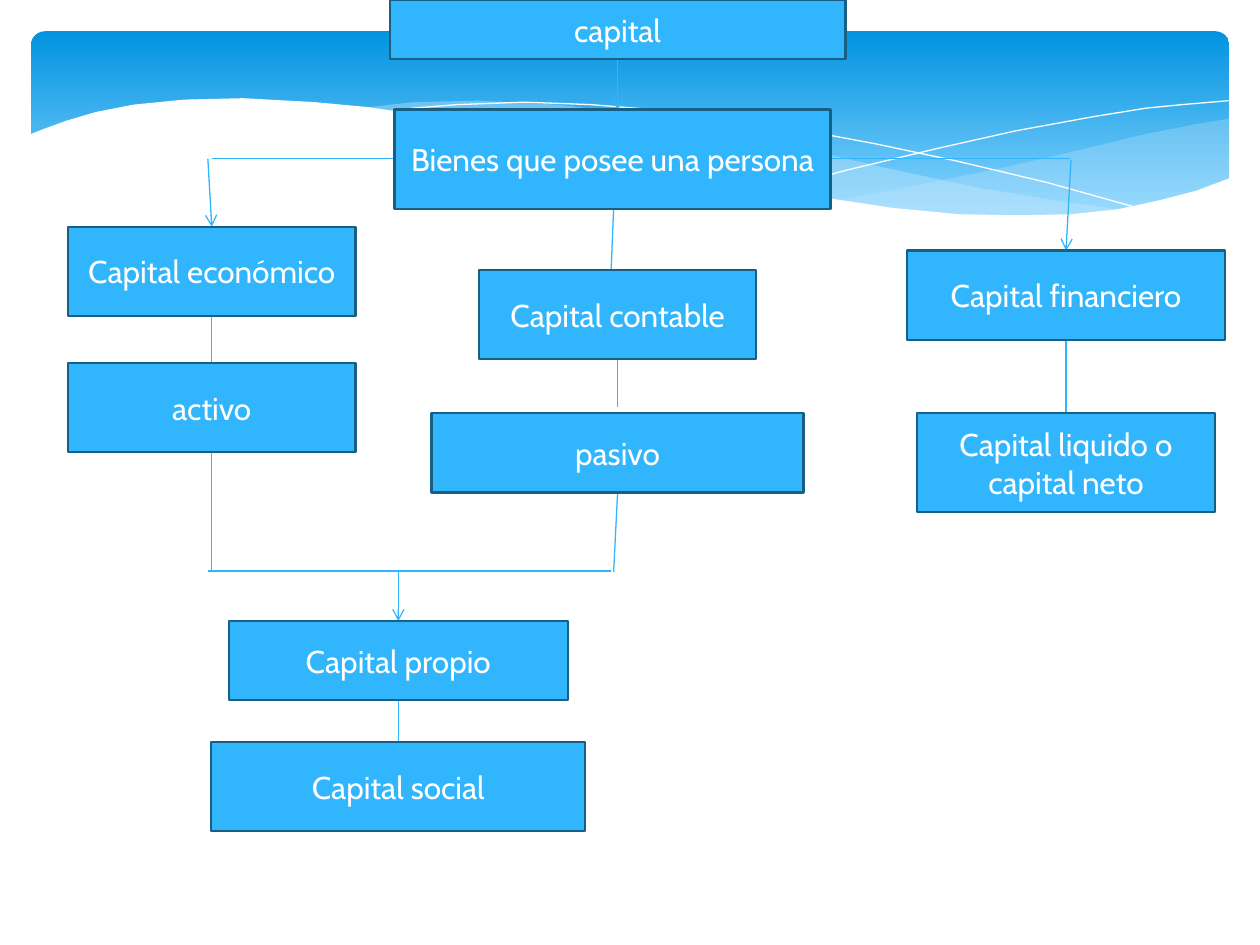
from pptx import Presentation
from pptx.dml.color import RGBColor
from pptx.enum.shapes import MSO_CONNECTOR as LINK, MSO_SHAPE as KIND
from pptx.enum.text import MSO_ANCHOR as ANCHOR, PP_ALIGN as ALIGN
from pptx.oxml.ns import qn
from pptx.util import Cm, Pt
from lxml.etree import SubElement as Sub

SKY = RGBColor(0x31, 0xB6, 0xFD)
NAVY = RGBColor(0x19, 0x5F, 0x84)
DEEP = RGBColor(0x02, 0x93, 0xE0)
LIGHT = RGBColor(0x83, 0xD3, 0xFE)
PALE = RGBColor(0xC6, 0xE7, 0xFC)
WHITE = RGBColor(0xFF, 0xFF, 0xFF)

deck = Presentation()
deck.slide_width, deck.slide_height = Cm(25.4), Cm(19.05)
slide = deck.slides.add_slide(deck.slide_layouts[6])
shapes = slide.shapes


def add_wave(points, close=True):
    """Draw an outline through points given in cm."""
    spots = [(Cm(x), Cm(y)) for x, y in points]
    pen = shapes.build_freeform(*spots[0], scale=1.0)
    pen.add_line_segments(spots[1:], close=close)
    wave = pen.convert_to_shape()
    wave.shadow.inherit = False
    return wave


# Banner with waves
band = shapes.add_shape(KIND.ROUNDED_RECTANGLE, Cm(0.63), Cm(0.63), Cm(24.15), Cm(3.96))
band.adjustments[0] = 0.07
band.shadow.inherit = False
band.line.fill.background()
band.fill.gradient()
band.fill.gradient_angle = 270
for stop, color, place in zip(band.fill.gradient_stops, (DEEP, LIGHT), (0, 0.9)):
    stop.color.rgb = color
    stop.position = place

right = [
    (24.79, 2.39), (24.08, 2.51), (23.01, 2.72), (21.87, 3), (20.45, 3.33),
    (18.52, 3.73), (16.79, 4.06), (17.91, 4.19), (18.92, 4.29), (19.84, 4.37),
    (21.21, 4.37), (22.15, 4.29), (22.99, 4.14), (23.75, 3.96), (24.46, 3.73),
    (24.79, 3.58),
]
middle = [
    (22.68, 4.24), (21.26, 4.04), (19.69, 3.78), (17.93, 3.4), (15.98, 2.95),
    (14.83, 2.69), (13.74, 2.46), (12.75, 2.29), (11.23, 2.11), (9.65, 2.03),
    (8.33, 2.06), (7.26, 2.18), (8.69, 2.39), (10.26, 2.69), (11.4, 2.95),
    (13.46, 3.43), (15.27, 3.81), (16.51, 4.01), (17.65, 4.19), (19, 4.32),
    (20.5, 4.39), (21.54, 4.37),
]
falling = [
    (7.85, 2.29), (8.33, 2.18), (9.22, 2.11), (10.57, 2.06), (11.91, 2.11),
    (13.54, 2.24), (14.78, 2.39), (16.15, 2.62), (17.65, 2.9), (19.3, 3.25),
    (21.11, 3.68), (23.04, 4.22),
]
rising = [
    (15.57, 3.84), (17.07, 3.43), (19, 2.97), (20.47, 2.64), (22, 2.36),
    (23.11, 2.18), (23.83, 2.11), (24.77, 2.03),
]
front = [
    (24.82, 3.58), (24.13, 3.84), (23.37, 4.04), (22.53, 4.22), (21.59, 4.32),
    (20.55, 4.34), (19.33, 4.32), (17.98, 4.19), (16.46, 3.96), (14.71, 3.66),
    (12.78, 3.25), (11.35, 2.9), (9.93, 2.59), (8.64, 2.34), (7.42, 2.16),
    (6.35, 2.06), (4.9, 1.98), (3.71, 2.01), (2.69, 2.11), (1.93, 2.26),
    (1.32, 2.44), (0.91, 2.59), (0.58, 2.72), (0.58, 5.69), (24.82, 5.69),
]

for points, alpha in ((right, 29), (middle, 40)):
    wave = add_wave(points)
    wave.line.fill.background()
    wave.fill.solid()
    wave.fill.fore_color.rgb = PALE
    tint = wave.fill._xPr.find(qn("a:solidFill"))[0]
    Sub(tint, qn("a:alpha"), val=str(alpha * 1000))

for points in (falling, rising):
    curve = add_wave(points, close=False)
    curve.fill.background()
    curve.line.color.rgb = WHITE
    curve.line.width = Pt(0)

wave = add_wave(front)
wave.line.fill.background()
wave.fill.solid()
wave.fill.fore_color.rgb = WHITE

# Links: x1, y1, x2, y2, arrow
left, mid, far, own = 4.27, 12.45, 21.49, 8.03
links = [
    (mid, 1.19, mid, 2.21, True),
    (16.76, 3.2, 21.56, 3.2, False),
    (7.95, 3.2, left, 3.2, False),
    (4.19, 3.2, left, 4.57, True),
    (21.59, 3.23, far, 5.05, True),
    (12.37, 4.2, 12.32, 5.45, False),
    (left, 6.38, left, 7.32, False),
    (mid, 7.24, mid, 8.2, False),
    (far, 6.86, far, 8.33, False),
    (left, 9.12, left, 11.53, False),
    (mid, 9.93, 12.37, 11.53, False),
    (4.19, 11.51, 12.32, 11.51, False),
    (own, 11.53, own, 12.52, True),
    (own, 14.12, own, 14.96, False),
]
for x1, y1, x2, y2, arrow in links:
    link = shapes.add_connector(LINK.STRAIGHT, Cm(x1), Cm(y1), Cm(x2), Cm(y2))
    link.line.color.rgb = SKY
    link.line.width = Pt(0.75)
    if arrow:
        Sub(link.line._get_or_add_ln(), qn("a:tailEnd"), type="arrow")
    Sub(link._element.spPr, qn("a:effectLst"))

# Boxes: text, centre, top, width, height
boxes = [
    ("capital", mid, 0, 9.19, 1.19),
    ("Bienes que posee una persona", 12.35, 2.21, 8.79, 2),
    ("Capital económico", left, 4.57, 5.8, 1.8),
    ("Capital financiero", far, 5.05, 6.4, 1.8),
    ("Capital contable", mid, 5.44, 5.6, 1.8),
    ("activo", left, 7.32, 5.8, 1.8),
    ("pasivo", mid, 8.33, 7.5, 1.6),
    ("Capital liquido o capital neto", far, 8.33, 6, 2),
    ("Capital propio", own, 12.52, 6.83, 1.6),
    ("Capital social", own, 14.96, 7.54, 1.8),
]
for text, center, top, width, height in boxes:
    box = shapes.add_shape(
        KIND.RECTANGLE, Cm(center - width / 2), Cm(top), Cm(width), Cm(height))
    box.shadow.inherit = False
    box.fill.solid()
    box.fill.fore_color.rgb = SKY
    box.line.color.rgb = NAVY
    box.line.width = Pt(1.25)
    frame = box.text_frame
    frame.word_wrap = True
    frame.vertical_anchor = ANCHOR.MIDDLE
    para = frame.paragraphs[0]
    para.alignment = ALIGN.CENTER
    run = para.add_run()
    run.text = text
    run.font.name = "Cabin"
    run.font.size = Pt(18)
    run.font.color.rgb = WHITE

deck.save("out.pptx")
